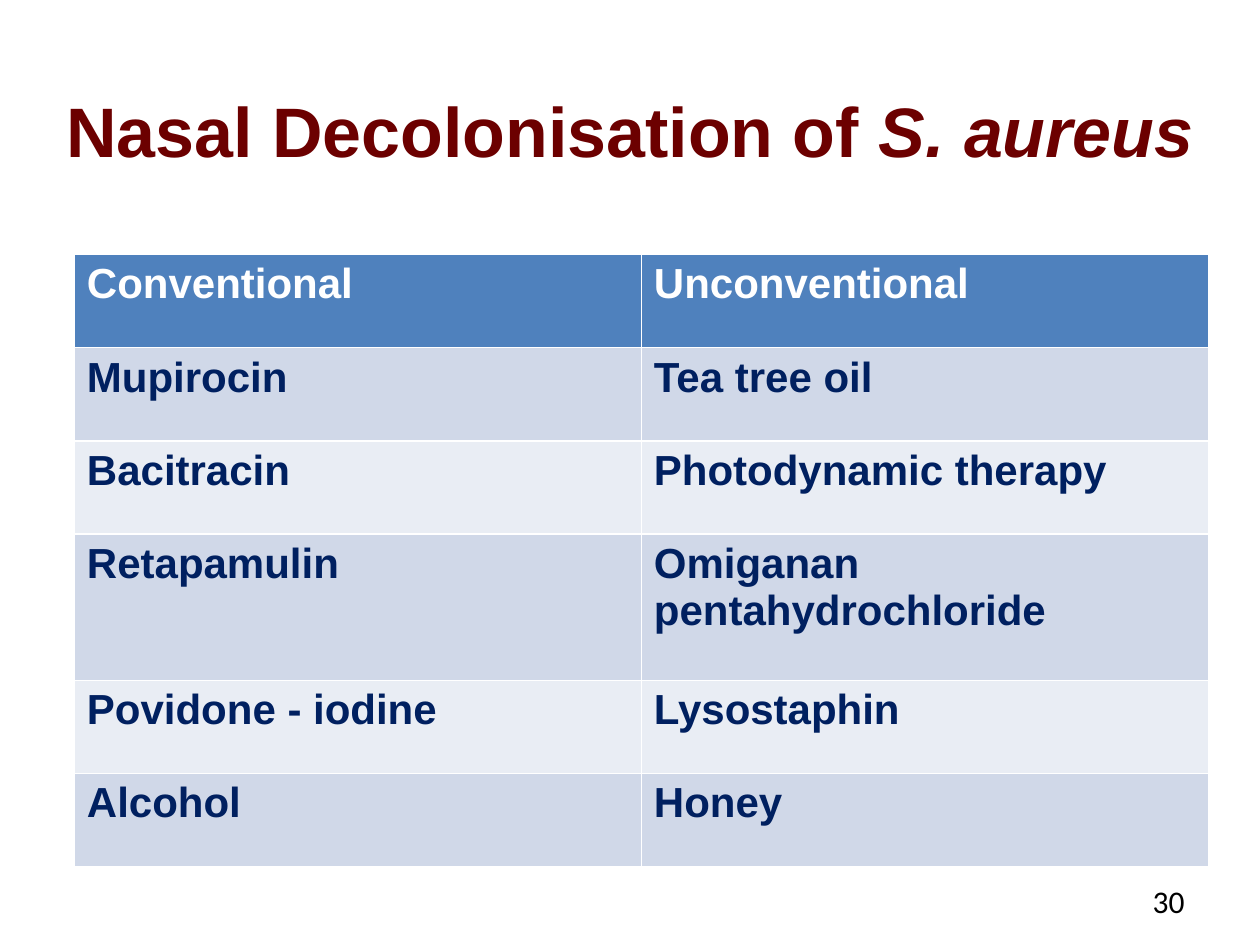
from pptx import Presentation
from pptx.dml.color import RGBColor
from pptx.enum.text import MSO_ANCHOR as Anchor, PP_ALIGN as Align
from pptx.util import Inches, Pt

TITLE = {"name": "Arial", "size": Pt(40), "bold": True}
CELL = {"name": "Arial", "size": Pt(24), "bold": True}
NUMBER = {"name": "Calibri", "size": Pt(18)}
HEADER_FILL, BAND_FILLS = "4F81BD", ("E9EDF4", "D0D8E8")
ROWS = [
    ("Conventional", "Unconventional"),
    ("Mupirocin", "Tea tree oil"),
    ("Bacitracin", "Photodynamic therapy"),
    ("Retapamulin", "Omiganan pentahydrochloride"),
    ("Povidone - iodine", "Lysostaphin"),
    ("Alcohol", "Honey"),
]
ROW_HEIGHT, TALL_ROW_HEIGHT, TALL_ROW = 0.74, 1.16, 3


def colour(value):
    """Turn a hex string into a colour."""
    return RGBColor.from_string(value)


def add_span(para, text, hex_colour, formats):
    """Add a formatted run to a paragraph."""
    span = para.add_run()
    span.text = text
    for name, value in formats.items():
        setattr(span.font, name, value)
    span.font.color.rgb = colour(hex_colour)


def place(box, left, top, width, height):
    """Set the position and size of a shape."""
    for name, value in zip(("left", "top", "width", "height"), (left, top, width, height)):
        setattr(box, name, Inches(value))


def set_title(page):
    """Place and write the title."""
    title = page.shapes.title
    place(title, 0, 0.36, 10, 1.34)
    frame = title.text_frame
    frame.vertical_anchor = Anchor.MIDDLE
    para = frame.paragraphs[0]
    para.alignment = Align.CENTER
    add_span(para, "Nasal Decolonisation of ", "6C0000", TITLE)
    add_span(para, "S. aureus", "6C0000", {**TITLE, "italic": True})


def add_treatment_table(page):
    """Add the table of treatments with a header and banded rows."""
    heights = [TALL_ROW_HEIGHT if i == TALL_ROW else ROW_HEIGHT for i in range(len(ROWS))]
    table = page.shapes.add_table(
        len(ROWS), 2, Inches(0.59), Inches(2.02), Inches(9), Inches(sum(heights))
    ).table
    for i, texts in enumerate(ROWS):
        table.rows[i].height = Inches(heights[i])
        for j, text in enumerate(texts):
            cell = table.cell(i, j)
            cell.fill.solid()
            cell.fill.fore_color.rgb = colour(BAND_FILLS[i % 2] if i else HEADER_FILL)
            add_span(cell.text_frame.paragraphs[0], text, "002060" if i else "FFFFFF", CELL)


def add_page_number(page, text):
    """Add the page number at the bottom right."""
    box = page.shapes.add_textbox(Inches(7.17), Inches(6.95), Inches(2.33), Inches(0.4))
    frame = box.text_frame
    frame.word_wrap = True
    frame.vertical_anchor = Anchor.MIDDLE
    para = frame.paragraphs[0]
    para.alignment = Align.RIGHT
    add_span(para, text, "000000", NUMBER)


def main():
    """Build and save the slide."""
    deck = Presentation()
    deck.slide_width, deck.slide_height = Inches(10), Inches(7.5)
    page = deck.slides.add_slide(deck.slide_layouts[5])
    set_title(page)
    add_treatment_table(page)
    add_page_number(page, "30")
    deck.save("out.pptx")


if __name__ == "__main__":
    main()
